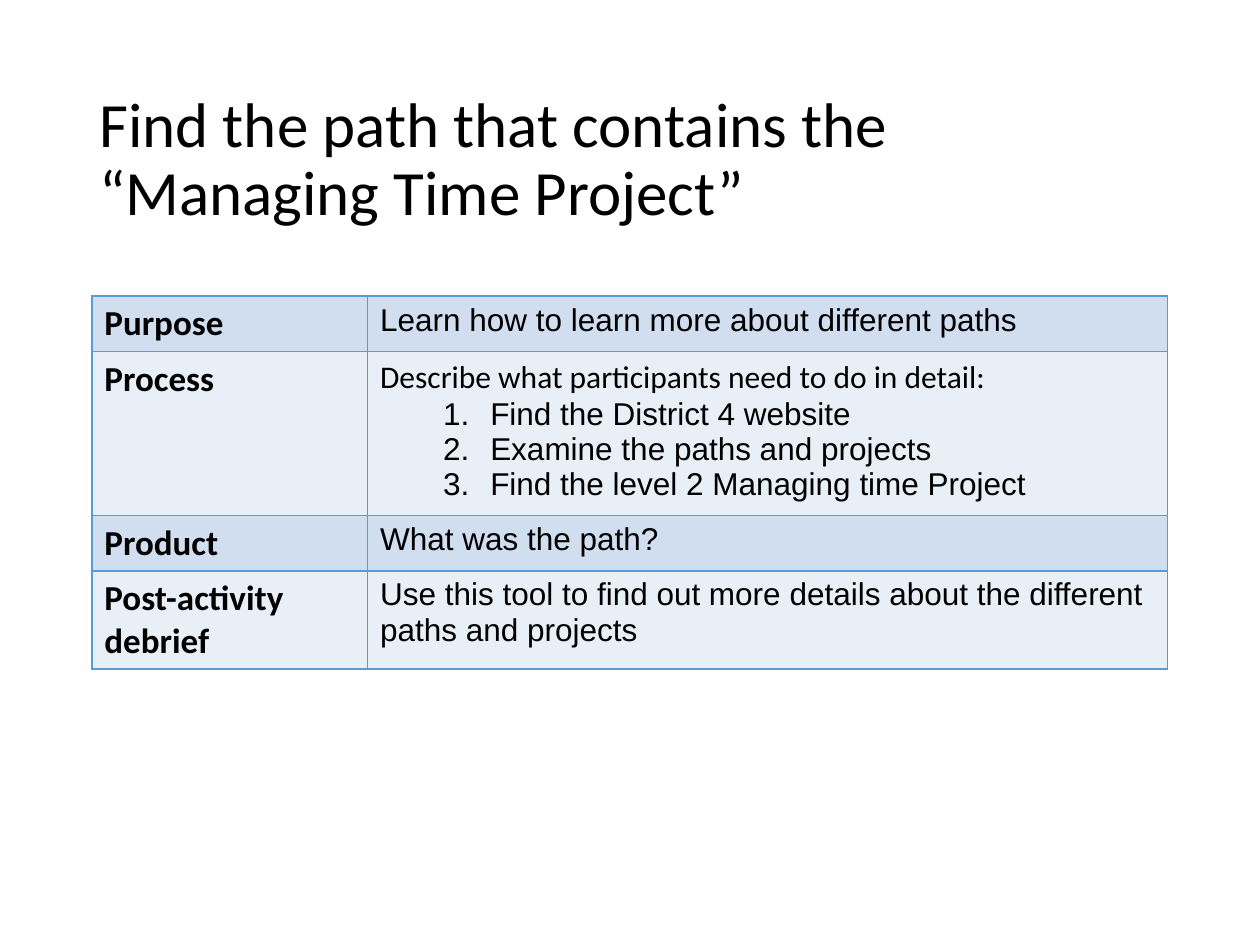
from lxml import etree
from pptx import Presentation
from pptx.dml.color import RGBColor
from pptx.enum.text import MSO_ANCHOR
from pptx.oxml.ns import qn
from pptx.util import Cm, Pt

MIDDLE = MSO_ANCHOR.MIDDLE
BLACK = RGBColor(0x00, 0x00, 0x00)
EDGE = RGBColor(0x5B, 0x9B, 0xD5)
BANDS = [RGBColor(0xD0, 0xDE, 0xEF), RGBColor(0xE9, 0xEF, 0xF7)]

# Row label, row height in cm, paragraphs as (text, font, numbered)
ROWS = [
    ("Purpose", 1.12, [("Learn how to learn more about different paths", "Arial", False)]),
    ("Process", 3.17, [
        ("Describe what participants need to do in detail:", "Calibri", False),
        ("Find the District 4 website", "Arial", True),
        ("Examine the paths and projects", "Arial", True),
        ("Find the level 2 Managing time Project", "Arial", True),
    ]),
    ("Product", 1.12, [("What was the path?", "Arial", False)]),
    ("Post-activity debrief", 1.97, [
        ("Use this tool to find out more details about the different paths and projects",
         "Arial", False),
    ]),
]


def style(para, name, size, bold=False):
    font = para.font
    font.name = name
    font.size = Pt(size)
    font.bold = bold
    font.color.rgb = BLACK


def border(cell):
    props = cell._tc.get_or_add_tcPr()
    for side in ("lnL", "lnR", "lnT", "lnB"):
        line = etree.SubElement(props, qn(f"a:{side}"), w=str(Pt(1)))
        fill = etree.SubElement(line, qn("a:solidFill"))
        etree.SubElement(fill, qn("a:srgbClr"), val=str(EDGE))


prs = Presentation()
prs.slide_width = Cm(25.4)
prs.slide_height = Cm(19.05)
slide = prs.slides.add_slide(prs.slide_layouts[6])

# Title
title = slide.shapes.add_textbox(Cm(1.75), Cm(1.4), Cm(21.9), Cm(3.68))
frame = title.text_frame
frame.word_wrap = True
frame.vertical_anchor = MIDDLE
para = frame.paragraphs[0]
para.text = "Find the path that contains the “Managing Time Project”"
para.line_spacing = 0.9
style(para, "Calibri", 36)

# Table
high = sum(row[1] for row in ROWS)
table = slide.shapes.add_table(
    len(ROWS), 2, Cm(1.85), Cm(5.97), Cm(21.69), Cm(high)).table
table.first_row = False
table.horz_banding = False
table.columns[0].width = Cm(5.56)
table.columns[1].width = Cm(16.13)

for i, (label, height, lines) in enumerate(ROWS):
    table.rows[i].height = Cm(height)
    head, body = table.rows[i].cells
    for cell in (head, body):
        border(cell)
        cell.fill.solid()
        cell.fill.fore_color.rgb = BANDS[i % 2]

    # Row label
    para = head.text_frame.paragraphs[0]
    para.text = label
    style(para, "Calibri", 20, True)

    # Row text, with numbered steps
    frame = body.text_frame
    for j, (text, name, step) in enumerate(lines):
        para = frame.add_paragraph() if j else frame.paragraphs[0]
        para.text = text
        if step:
            para.level = 1
            props = para._p.get_or_add_pPr()
            props.set("marL", str(Cm(2.22)))
            props.set("indent", str(Cm(-0.95)))
            etree.SubElement(props, qn("a:buFont"), typeface="+mj-lt")
            etree.SubElement(props, qn("a:buAutoNum"), type="arabicPeriod")
        style(para, name, 18)

prs.save("out.pptx")
